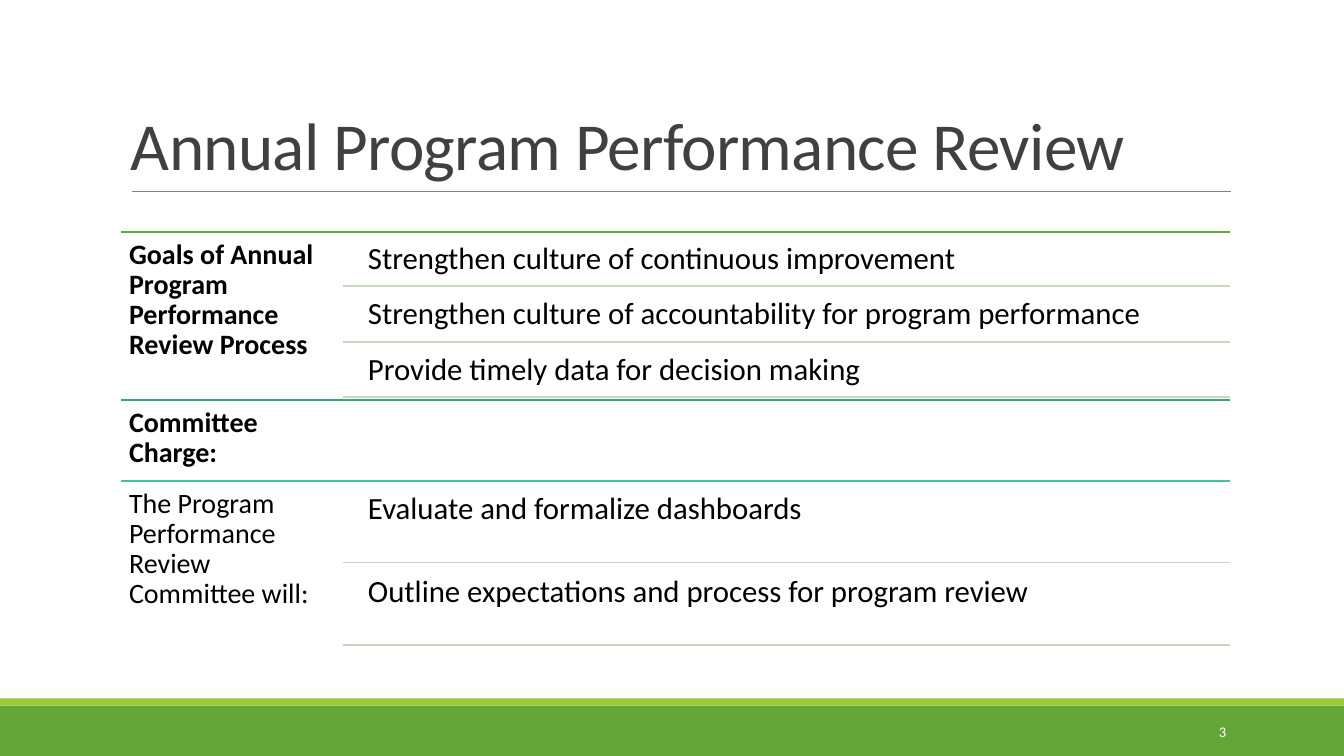
from lxml import etree
from pptx import Presentation
from pptx.dml.color import RGBColor
from pptx.enum.shapes import MSO_CONNECTOR, MSO_SHAPE
from pptx.enum.text import MSO_ANCHOR, PP_ALIGN
from pptx.oxml.ns import qn
from pptx.util import Inches, Pt

STRAIGHT = MSO_CONNECTOR.STRAIGHT
RECTANGLE = MSO_SHAPE.RECTANGLE
TOP, MIDDLE, BOTTOM = MSO_ANCHOR.TOP, MSO_ANCHOR.MIDDLE, MSO_ANCHOR.BOTTOM
LEFT, RIGHT = PP_ALIGN.LEFT, PP_ALIGN.RIGHT

FONT = "Calibri"
SLIDE_WIDTH = 13.33
HEADING_LEFT, ITEM_RULE_LEFT, ITEM_LEFT, RULE_RIGHT = 1.2, 3.4, 3.56, 12.2
HEADING_WIDTH, ITEM_WIDTH = 2.2, 8.63

# Each section: heading, bold, rule colour, top, height,
# first item offset, item height, item pitch, items
SECTIONS = [
    ("Goals of Annual Program Performance Review Process", True, "63A537",
     2.3, 1.67, 0.02, 0.52, 0.55,
     ["Strengthen culture of continuous improvement",
      "Strengthen culture of accountability for program performance",
      "Provide timely data for decision making"]),
    ("Committee Charge:", True, "37A76F", 3.97, 0.8, 0, 0, 0, []),
    ("The Program Performance Review Committee will:", False, "44C1A3",
     4.77, 1.67, 0.03, 0.78, 0.82,
     ["Evaluate and formalize dashboards",
      "Outline expectations and process for program review"]),
]


def rgb(hex_code):
    return RGBColor.from_string(hex_code)


def add_band(slide, top, height, color):
    band = slide.shapes.add_shape(
        RECTANGLE, 0, Inches(top), Inches(SLIDE_WIDTH), Inches(height))
    band.shadow.inherit = False
    band.fill.solid()
    band.fill.fore_color.rgb = rgb(color)
    band.line.fill.background()


def add_rule(slide, left, right, y, color, weight=1.25):
    rule = slide.shapes.add_connector(
        STRAIGHT, Inches(left), Inches(y), Inches(right), Inches(y))
    rule.line.color.rgb = rgb(color)
    rule.line.width = Pt(weight)
    etree.SubElement(rule._element.spPr, qn("a:effectLst"))


def add_text(slide, text, left, top, width, height, size, color="000000",
             bold=False, anchor=TOP, align=LEFT, line_spacing=0.9,
             margins=(0.1, 0.05), tracking=None):
    """Margins are (horizontal, vertical) in inches; tracking is in points."""
    box = slide.shapes.add_textbox(
        Inches(left), Inches(top), Inches(width), Inches(height))
    frame = box.text_frame
    frame.word_wrap = True
    frame.vertical_anchor = anchor
    frame.margin_left = frame.margin_right = Inches(margins[0])
    frame.margin_top = frame.margin_bottom = Inches(margins[1])
    paragraph = frame.paragraphs[0]
    paragraph.alignment = align
    paragraph.line_spacing = line_spacing
    run = paragraph.add_run()
    run.text = text
    run.font.name = FONT
    run.font.size = Pt(size)
    run.font.bold = bold
    run.font.color.rgb = rgb(color)
    if tracking is not None:
        run._r.get_or_add_rPr().set("spc", str(int(tracking * 100)))


def add_section(slide, heading, bold, color, top, height,
                item_offset, item_height, item_pitch, items):
    add_rule(slide, HEADING_LEFT, RULE_RIGHT, top, color)
    add_text(slide, heading, HEADING_LEFT, top, HEADING_WIDTH, height, 20,
             bold=bold, margins=(0.08, 0.08))
    for index, item in enumerate(items):
        item_top = top + item_offset + index * item_pitch
        add_text(slide, item, ITEM_LEFT, item_top, ITEM_WIDTH, item_height, 22,
                 margins=(0.09, 0.09))
        add_rule(slide, ITEM_RULE_LEFT, RULE_RIGHT, item_top + item_height,
                 "C6D8BF")


def main():
    deck = Presentation()
    deck.slide_width, deck.slide_height = Inches(SLIDE_WIDTH), Inches(7.5)
    slide = deck.slides.add_slide(deck.slide_layouts[6])

    add_band(slide, 7, 0.5, "63A537")
    add_band(slide, 6.93, 0.07, "99CB38")
    add_rule(slide, 1.31, 12.21, 1.9, "808080", weight=0.5)
    add_text(slide, "Annual Program Performance Review", 1.2, 0.31, 11, 1.57,
             48, color="404040", anchor=BOTTOM, line_spacing=0.85,
             tracking=-0.5)
    add_text(slide, "3", 10.83, 7.06, 1.43, 0.4, 10.5, color="FFFFFF",
             anchor=MIDDLE, align=RIGHT, line_spacing=1.0)
    for section in SECTIONS:
        add_section(slide, *section)

    deck.save("out.pptx")


if __name__ == "__main__":
    main()
